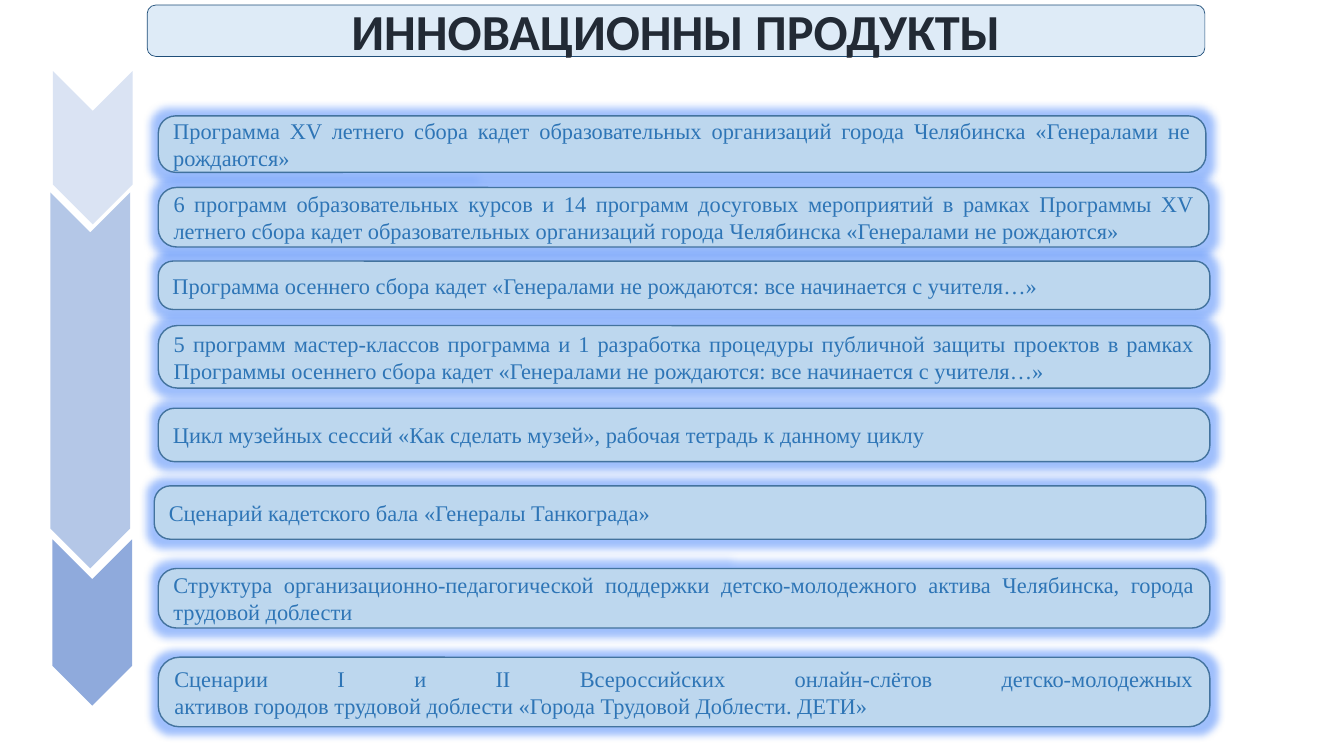
"""Build the slide listing innovative products of the cadet programme."""
from lxml import etree
from pptx import Presentation
from pptx.dml.color import RGBColor
from pptx.enum import shapes, text
from pptx.oxml import ns
from pptx.util import Inches, Pt

TITLE_FILL = RGBColor(0xDE, 0xEB, 0xF7)
TITLE_LINE = RGBColor(0x1F, 0x4E, 0x79)
TITLE_TEXT = RGBColor(0x22, 0x2A, 0x35)
CARD_FILL = RGBColor(0xBD, 0xD7, 0xEE)
CARD_LINE = RGBColor(0x43, 0x73, 0x9E)
CARD_TEXT = RGBColor(0x2E, 0x75, 0xB6)
GLOW = RGBColor(0x0F, 0x5F, 0xF9)
CHEVRON_LIGHT = RGBColor(0xDA, 0xE3, 0xF3)
CHEVRON_MID = RGBColor(0xB4, 0xC7, 0xE7)
CHEVRON_DARK = RGBColor(0x8F, 0xAA, 0xDC)

prs = Presentation()
prs.slide_width, prs.slide_height = Inches(13.33), Inches(7.5)
s = prs.slides.add_slide(prs.slide_layouts[6])


def add_box(kind, x, y, w, h, fill, line=None, line_width=1):
    sp = s.shapes.add_shape(kind, Inches(x), Inches(y), Inches(w), Inches(h))
    sp.shadow.inherit = False
    sp.fill.solid()
    sp.fill.fore_color.rgb = fill
    if line is None:
        sp.line.fill.background()
    else:
        sp.line.color.rgb = line
        sp.line.width = Pt(line_width)
    return sp


def write(sp, content, font, size, color, align, bold=False):
    tf = sp.text_frame
    tf.word_wrap = True
    tf.vertical_anchor = text.MSO_ANCHOR.MIDDLE
    p = tf.paragraphs[0]
    p.text = content
    p.alignment = align
    for r in p.runs:
        r.font.name, r.font.size, r.font.bold = font, Pt(size), bold
        r.font.color.rgb = color
    return p


title = add_box(shapes.MSO_SHAPE.ROUNDED_RECTANGLE, 1.46, 0.05, 10.49, 0.51,
                TITLE_FILL, TITLE_LINE, 0.5)
p = write(title, "ИННОВАЦИОННЫ ПРОДУКТЫ", "Calibri", 36, TITLE_TEXT,
          text.PP_ALIGN.CENTER, bold=True)
outline = etree.Element(ns.qn("a:ln"), w=str(Pt(0.75)))
outline_fill = etree.SubElement(outline, ns.qn("a:solidFill"))
etree.SubElement(outline_fill, ns.qn("a:srgbClr"), val=str(TITLE_TEXT))
p.runs[0].font._element.insert(0, outline)

chevrons = [
    (0.16, 1.07, 1.52, CHEVRON_LIGHT),
    (-0.97, 3.38, 3.73, CHEVRON_MID),
    (0.09, 5.78, 1.65, CHEVRON_DARK),
]
for x, y, length, color in chevrons:
    sp = add_box(shapes.MSO_SHAPE.CHEVRON, x, y, length, 0.79, color)
    sp.rotation = 90

products = [
    (1.57, 1.15, 10.39, 0.56, "Программа XV летнего сбора кадет образовательных организаций "
     "города Челябинска «Генералами не рождаются»"),
    (1.57, 1.86, 10.42, 0.59, "6 программ образовательных курсов и 14 программ досуговых "
     "мероприятий в рамках Программы XV летнего сбора кадет образовательных организаций "
     "города Челябинска «Генералами не рождаются»"),
    (1.57, 2.59, 10.43, 0.48, "Программа осеннего сбора кадет «Генералами не рождаются: "
     "все начинается с учителя…»"),
    (1.57, 3.23, 10.43, 0.62, "5 программ мастер-классов программа и 1 разработка процедуры "
     "публичной защиты проектов в рамках Программы осеннего сбора кадет «Генералами "
     "не рождаются: все начинается с учителя…»"),
    (1.57, 4.05, 10.43, 0.53, "Цикл музейных сессий «Как сделать музей», "
     "рабочая тетрадь к данному циклу"),
    (1.53, 4.82, 10.43, 0.53, "Сценарий кадетского бала «Генералы Танкограда»"),
    (1.57, 5.64, 10.43, 0.59, "Структура организационно-педагогической поддержки "
     "детско-молодежного актива Челябинска, города трудовой доблести"),
    (1.57, 6.52, 10.43, 0.69, "Сценарии I и II Всероссийских онлайн-слётов "
     "детско-молодежных\nактивов городов трудовой доблести «Города Трудовой Доблести. ДЕТИ»"),
]
for x, y, w, h, content in products:
    card = add_box(shapes.MSO_SHAPE.ROUNDED_RECTANGLE, x, y, w, h, CARD_FILL, CARD_LINE)
    card.adjustments[0] = 0.304
    write(card, content, "Times New Roman", 16, CARD_TEXT, text.PP_ALIGN.JUSTIFY)
    effects = card._element.spPr.find(ns.qn("a:effectLst"))
    glow = etree.SubElement(effects, ns.qn("a:glow"), rad=str(Pt(11)))
    glow_color = etree.SubElement(glow, ns.qn("a:srgbClr"), val=str(GLOW))
    etree.SubElement(glow_color, ns.qn("a:alpha"), val="40000")

prs.save("out.pptx")
